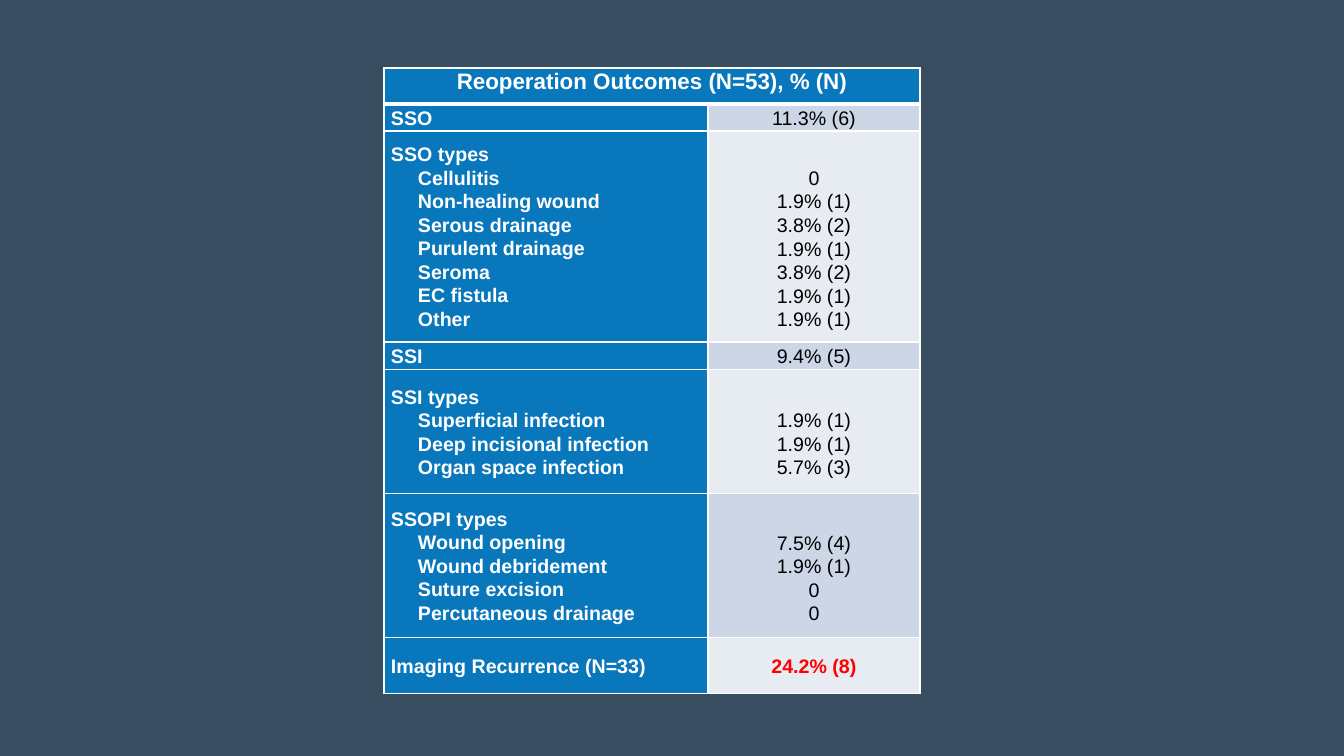
from lxml.etree import SubElement
from pptx import Presentation
from pptx.dml.color import RGBColor
from pptx.enum.text import MSO_ANCHOR as ANCHOR, PP_ALIGN as ALIGN
from pptx.oxml.ns import qn
from pptx.util import Emu, Pt

TITLE = "Reoperation Outcomes (N=53), % (N)"
OUTCOMES = [
    ("SSO", "11.3% (6)", []),
    ("SSO types", None, [
        ("Cellulitis", "0"),
        ("Non-healing wound", "1.9% (1)"),
        ("Serous drainage", "3.8% (2)"),
        ("Purulent drainage", "1.9% (1)"),
        ("Seroma", "3.8% (2)"),
        ("EC fistula", "1.9% (1)"),
        ("Other", "1.9% (1)"),
    ]),
    ("SSI", "9.4% (5)", []),
    ("SSI types", None, [
        ("Superficial infection", "1.9% (1)"),
        ("Deep incisional infection", "1.9% (1)"),
        ("Organ space infection", "5.7% (3)"),
    ]),
    ("SSOPI types", None, [
        ("Wound opening", "7.5% (4)"),
        ("Wound debridement", "1.9% (1)"),
        ("Suture excision", "0"),
        ("Percutaneous drainage", "0"),
    ]),
    ("Imaging Recurrence (N=33)", "24.2% (8)", []),
]
COLORS = {"back": "384D60", "label": "0877BC", "dark": "CCD6E7", "light": "E7ECF3",
          "white": "FFFFFF", "black": "000000", "alert": "FF0000"}
LEFT, TOP = 384, 68
COLS = [324, 212]
ROWS = [36, 27, 211, 28, 124, 144, 56]
SIDE, INDENT, LINE = 7, 27, 24


def px(n):
    return Emu(round(n * 914400 / 100.8))


def rgb(name):
    return RGBColor.from_string(COLORS[name])


def set_borders(cell, top=1, bottom=1):
    tcPr = cell._tc.get_or_add_tcPr()
    for side, width in (("L", 1), ("R", 1), ("T", top), ("B", bottom)):
        ln = SubElement(tcPr, qn(f"a:ln{side}"), w=str(Pt(width)))
        fill = SubElement(ln, qn("a:solidFill"))
        SubElement(fill, qn("a:srgbClr"), val=COLORS["white"])


def fill_cell(cell, lines, fill, color="white", bold=True, size=14,
              align=ALIGN.LEFT, anchor=ANCHOR.MIDDLE, margin_top=0):
    layout = {"margin_left": px(SIDE), "margin_right": px(SIDE), "margin_top": px(margin_top),
              "margin_bottom": 0, "vertical_anchor": anchor}
    for name, value in layout.items():
        setattr(cell, name, value)
    cell.fill.solid()
    cell.fill.fore_color.rgb = rgb(fill)
    tf = cell.text_frame
    for i, (text, indent) in enumerate(lines):
        p = tf.paragraphs[0] if i == 0 else tf.add_paragraph()
        p.alignment, p.line_spacing = align, 1.07
        if indent:
            p._p.get_or_add_pPr().set("marL", str(px(indent)))
        r = p.add_run()
        r.text = text
        for name, value in {"name": "Arial", "size": Pt(size), "bold": bold}.items():
            setattr(r.font, name, value)
        r.font.color.rgb = rgb(color)


prs = Presentation()
prs.slide_width, prs.slide_height = px(1344), px(756)
s = prs.slides.add_slide(prs.slide_layouts[6])
s.background.fill.solid()
s.background.fill.fore_color.rgb = rgb("back")

table = s.shapes.add_table(len(ROWS), len(COLS), px(LEFT), px(TOP),
                           px(sum(COLS)), px(sum(ROWS))).table
for col, width in zip(table.columns, COLS):
    col.width = px(width)
for row, height in zip(table.rows, ROWS):
    row.height = px(height)
for i, row in enumerate(table.rows):
    for cell in row.cells:
        set_borders(cell, top=3 if i == 1 else 1, bottom=3 if i == 0 else 1)

table.cell(0, 0).merge(table.cell(0, 1))
fill_cell(table.cell(0, 0), [(TITLE, 0)], "label", size=16, align=ALIGN.CENTER, anchor=ANCHOR.TOP)

for i, (label, total, types) in enumerate(OUTCOMES, start=1):
    last = i == len(OUTCOMES)
    labels = [(label, 0)] + [(name, INDENT) for name, _ in types]
    values = [(value, 0) for _, value in types] or [(total, 0)]
    fill_cell(table.cell(i, 0), labels, "label")
    fill_cell(table.cell(i, 1), values, "dark" if i % 2 else "light",
              color="alert" if last else "black", bold=last, align=ALIGN.CENTER,
              margin_top=LINE if types else 0)

prs.save("out.pptx")
